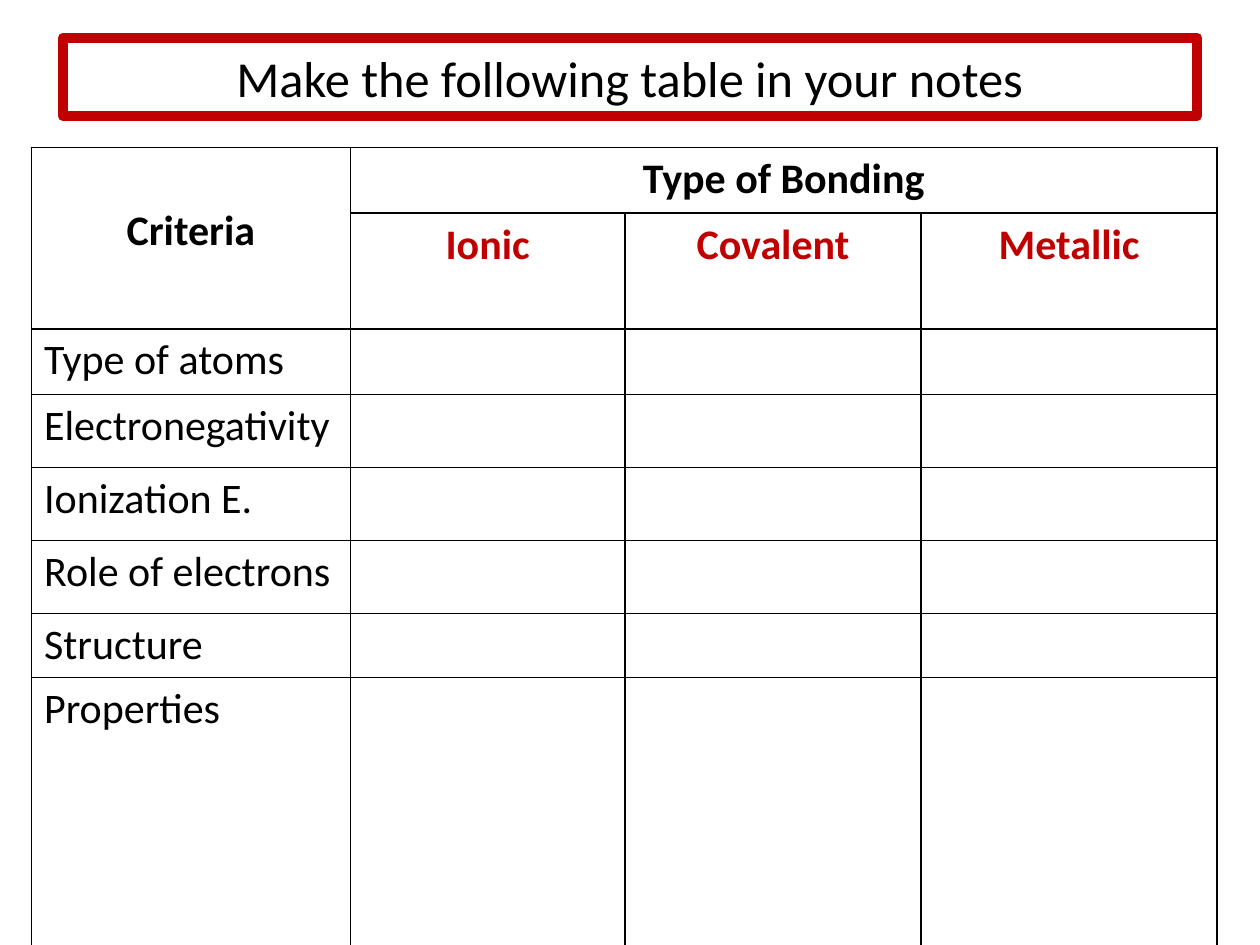
import pptx
import pptx.util
import pptx.dml.color
import pptx.enum.text
import pptx.oxml
import pptx.oxml.ns

Inches = pptx.util.Inches
Pt = pptx.util.Pt
ALIGN = pptx.enum.text.PP_ALIGN
ANCHOR = pptx.enum.text.MSO_ANCHOR

COLORS = {"ink": "000000", "accent": "C00000", "paper": "FFFFFF"}
FONT = "Calibri"
COLUMN_WIDTHS = [2.53, 2.18, 2.35, 2.35]
ROW_HEIGHTS = [0.52, 0.92, 0.52, 0.58, 0.58, 0.58, 0.51, 2.2]
BOND_TYPES = ["Ionic", "Covalent", "Metallic"]
CRITERIA = ["Type of atoms", "Electronegativity", "Ionization E.",
            "Role of electrons", "Structure", "Properties"]


def rgb(name):
    return pptx.dml.color.RGBColor.from_string(COLORS[name])


def write(frame, text, size=24, color="ink", bold=False, align=ALIGN.LEFT):
    paragraph = frame.paragraphs[0]
    paragraph.alignment = align
    run = paragraph.add_run()
    run.text = text
    run.font.name = FONT
    run.font.size = Pt(size)
    run.font.bold = bold
    run.font.color.rgb = rgb(color)


def style_cell(cell):
    properties = cell._tc.get_or_add_tcPr()
    for side in ("lnL", "lnR", "lnT", "lnB"):
        properties.append(pptx.oxml.parse_xml(
            f'<a:{side} {pptx.oxml.ns.nsdecls("a")} w="{Pt(1)}"><a:solidFill>'
            f'<a:srgbClr val="{COLORS["ink"]}"/></a:solidFill></a:{side}>'))
    cell.fill.solid()
    cell.fill.fore_color.rgb = rgb("paper")


def add_heading(slide, left, top, width, height):
    heading = slide.shapes.title
    heading.left, heading.top = Inches(left), Inches(top)
    heading.width, heading.height = Inches(width), Inches(height)
    heading.line.color.rgb = rgb("accent")
    heading.line.width = Pt(6)
    heading.text_frame.vertical_anchor = ANCHOR.MIDDLE
    heading.text_frame.auto_size = pptx.enum.text.MSO_AUTO_SIZE.NONE
    write(heading.text_frame, "Make the following table in your notes",
          size=28.8, align=ALIGN.CENTER)


def add_bonding_table(slide, left, top):
    bonding = slide.shapes.add_table(
        len(ROW_HEIGHTS), len(COLUMN_WIDTHS), Inches(left), Inches(top),
        Inches(sum(COLUMN_WIDTHS)), Inches(sum(ROW_HEIGHTS))).table
    bonding.first_row = False
    bonding.horz_banding = False
    for column, width in zip(bonding.columns, COLUMN_WIDTHS):
        column.width = Inches(width)
    for row, height in zip(bonding.rows, ROW_HEIGHTS):
        row.height = Inches(height)
    for cell in bonding.iter_cells():
        style_cell(cell)

    criteria_head = bonding.cell(0, 0)
    criteria_head.merge(bonding.cell(1, 0))
    criteria_head.margin_top = Inches(0.46)
    write(criteria_head.text_frame, "Criteria", bold=True, align=ALIGN.CENTER)

    bonding_head = bonding.cell(0, 1)
    bonding_head.merge(bonding.cell(0, len(BOND_TYPES)))
    write(bonding_head.text_frame, "Type of Bonding", bold=True,
          align=ALIGN.CENTER)

    for column, bond in enumerate(BOND_TYPES, 1):
        write(bonding.cell(1, column).text_frame, bond, color="accent",
              bold=True, align=ALIGN.CENTER)
    for row, criterion in enumerate(CRITERIA, 2):
        write(bonding.cell(row, 0).text_frame, criterion)


def main():
    deck = pptx.Presentation()
    deck.slide_width, deck.slide_height = Inches(10), Inches(7.5)
    slide = deck.slides.add_slide(deck.slide_layouts.get_by_name("Title Only"))
    add_heading(slide, 0.5, 0.3, 9, 0.62)
    add_bonding_table(slide, 0.25, 1.17)
    deck.save("out.pptx")


if __name__ == "__main__":
    main()
